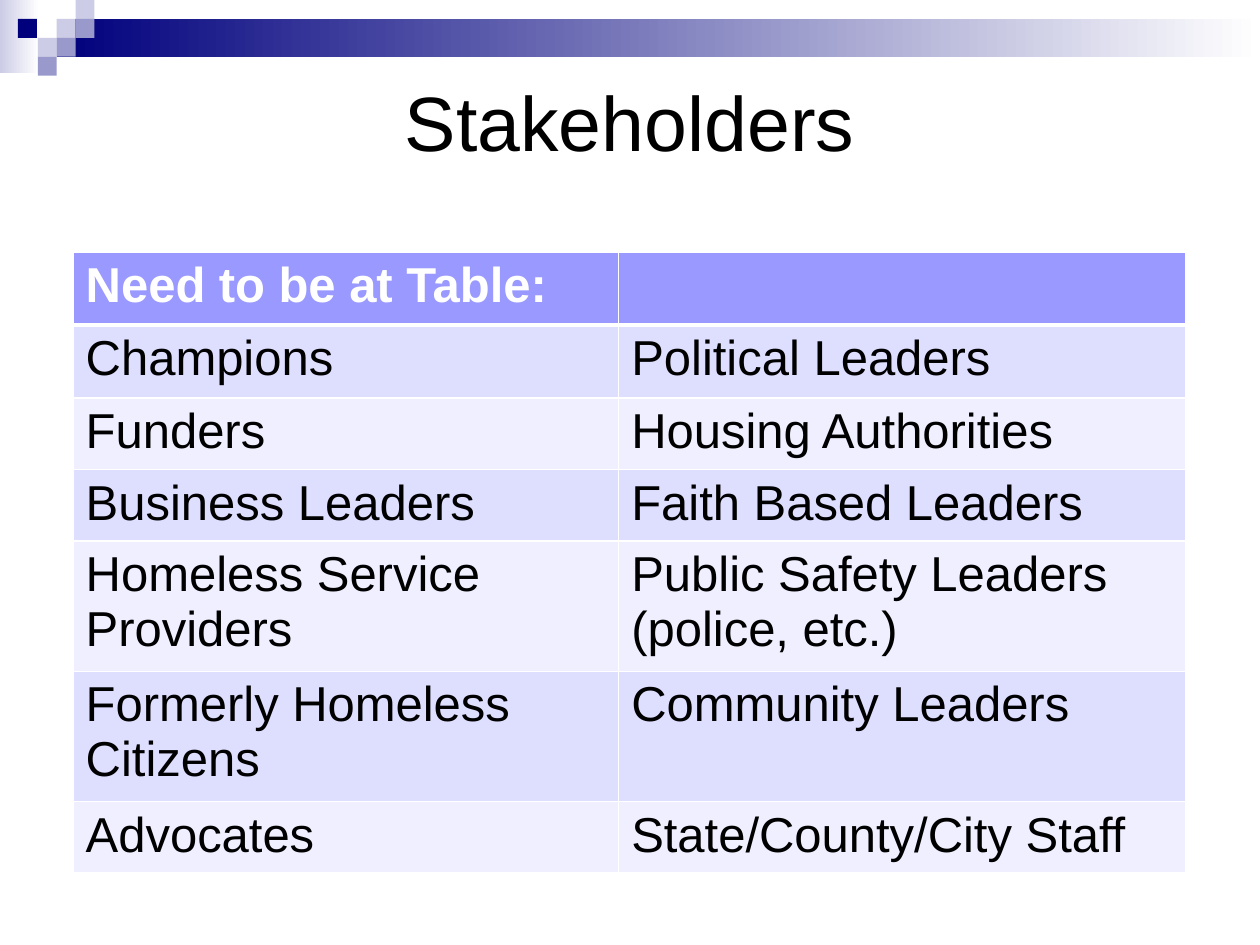
from lxml import etree
from pptx import Presentation, util as u
from pptx.dml.color import RGBColor
from pptx.enum import shapes, text
from pptx.oxml.ns import qn

BLACK = RGBColor(0x00, 0x00, 0x00)
WHITE = RGBColor(0xFF, 0xFF, 0xFF)
NAVY = RGBColor(0x00, 0x00, 0x7D)
SLATE = RGBColor(0x99, 0x99, 0xCC)
MIST = RGBColor(0xCC, 0xCC, 0xE6)
HEADER = RGBColor(0x99, 0x99, 0xFF)
BANDS = (RGBColor(0xEF, 0xEF, 0xFF), RGBColor(0xDE, 0xDE, 0xFF))

TILES = [
    (3, 1, MIST), (4, 0, MIST), (4, 1, SLATE), (2, 2, MIST),
    (0.95, 1, NAVY), (3, 2, SLATE), (2, 3, SLATE),
]
STAKEHOLDERS = [
    ("Need to be at Table:", ""),
    ("Champions", "Political Leaders"),
    ("Funders", "Housing Authorities"),
    ("Business Leaders", "Faith Based Leaders"),
    ("Homeless Service Providers", "Public Safety Leaders (police, etc.)"),
    ("Formerly Homeless Citizens", "Community Leaders"),
    ("Advocates", "State/County/City Staff"),
]
COLUMN_WIDTHS = (4.33, 4.5)
ROW_HEIGHTS = (0.58, 0.58, 0.5, 0.52, 1.03, 0.92, 0.55)


class Deck:
    """Holds the style and current slide, placing elements on a square grid."""

    font_name = "Arial"
    unit = 0.15

    def __init__(self, width, height):
        self.presentation = Presentation()
        self.presentation.slide_width = u.Inches(width)
        self.presentation.slide_height = u.Inches(height)
        self.slide = self.presentation.slides.add_slide(self.presentation.slide_layouts[6])

    def place(self, *cells):
        return [u.Inches(cell * self.unit) for cell in cells]

    def style(self, paragraph, size, color, bold=False):
        font = paragraph.font
        font.name, font.size, font.bold = self.font_name, u.Pt(size), bold
        font.color.rgb = color

    def block(self, column, row, columns, rows, color, fade_to=None):
        shape = self.slide.shapes.add_shape(
            shapes.MSO_SHAPE.RECTANGLE, *self.place(column, row, columns, rows))
        shape.shadow.inherit = False
        shape.line.fill.background()
        if fade_to is None:
            shape.fill.solid()
            shape.fill.fore_color.rgb = color
        else:
            shape.fill.gradient()
            shape.fill.gradient_angle = 0
            for stop, stop_color in zip(shape.fill.gradient_stops, (color, fade_to)):
                stop.color.rgb = stop_color

    def title(self, column, row, columns, rows, wording):
        box = self.slide.shapes.add_textbox(*self.place(column, row, columns, rows))
        frame = box.text_frame
        frame.word_wrap = True
        frame.vertical_anchor = text.MSO_ANCHOR.MIDDLE
        paragraph = frame.paragraphs[0]
        paragraph.text = wording
        paragraph.alignment = text.PP_ALIGN.CENTER
        self.style(paragraph, 44, BLACK)

    def border(self, cell, side, points):
        line = etree.SubElement(cell._tc.get_or_add_tcPr(), qn(f"a:ln{side}"), w=str(u.Pt(points)))
        fill = etree.SubElement(line, qn("a:solidFill"))
        etree.SubElement(fill, qn("a:srgbClr"), val=str(WHITE))

    def table(self, column, row, widths, heights, rows):
        frame = self.slide.shapes.add_table(
            len(rows), len(widths),
            *self.place(column, row, sum(widths) / self.unit, sum(heights) / self.unit))
        table = frame.table
        for table_column, width in zip(table.columns, widths):
            table_column.width = u.Inches(width)
        for index, (table_row, height, wordings) in enumerate(zip(table.rows, heights, rows)):
            table_row.height = u.Inches(height)
            heading = index == 0
            for cell, wording in zip(table_row.cells, wordings):
                cell.text = wording
                self.style(cell.text_frame.paragraphs[0], 28, WHITE if heading else BLACK, heading)
                for side in "LRTB":
                    thick = (index, side) in ((0, "B"), (1, "T"))
                    self.border(cell, side, 3 if thick else 1)
                cell.fill.solid()
                cell.fill.fore_color.rgb = HEADER if heading else BANDS[index % 2]


def main():
    deck = Deck(10, 7.5)
    deck.block(0, 0, 2.07, 3.87, MIST, WHITE)
    deck.block(3, 1, 63.67, 2, NAVY, WHITE)
    for column, row, color in TILES:
        deck.block(column, row, 1, 1, color)
    deck.title(3.33, 3.33, 60, 6.13, "Stakeholders")
    deck.table(3.87, 13.33, COLUMN_WIDTHS, ROW_HEIGHTS, STAKEHOLDERS)
    deck.presentation.save("out.pptx")


if __name__ == "__main__":
    main()
